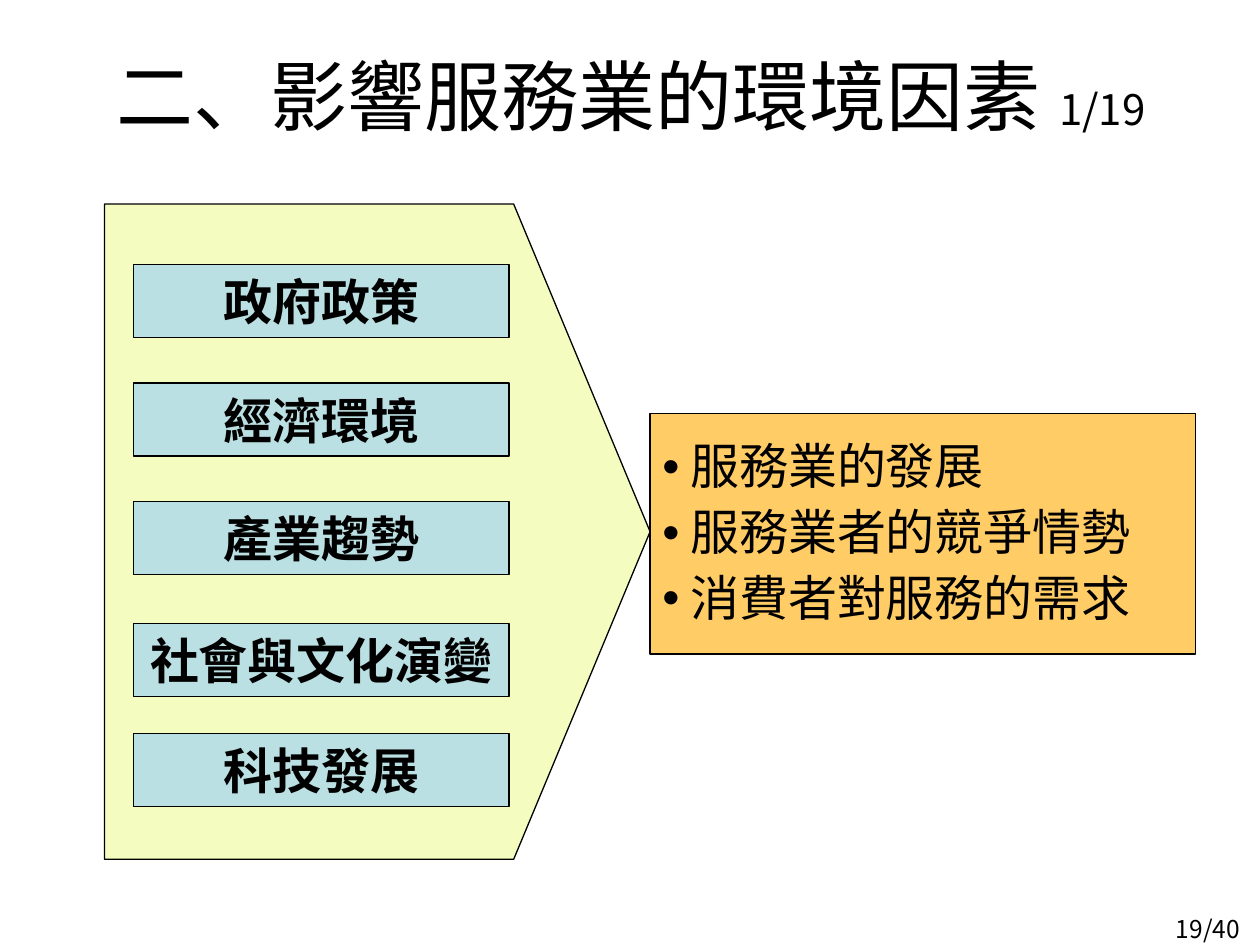
from lxml.etree import SubElement
from pptx import Presentation
from pptx.dml.color import RGBColor
from pptx.enum.shapes import MSO_SHAPE
from pptx.enum.text import MSO_ANCHOR, PP_ALIGN
from pptx.oxml.ns import qn
from pptx.util import Inches, Pt

deck = Presentation()
deck.slide_width, deck.slide_height = Inches(10), Inches(7.5)
page = deck.slides.add_slide(deck.slide_layouts[6])
column = deck.slide_width / 100
row = deck.slide_height / 75


def color(hex_value):
    return RGBColor.from_string(hex_value)


def write(text, *, place, sizes, font="Noto Sans CJK TC", bold=False,
          align=PP_ALIGN.LEFT, fill=None, shape=MSO_SHAPE.RECTANGLE,
          bullet=None, spacing=None):
    left, top, width, height = place
    area = [round(size) for size in
            (left * column, top * row, width * column, height * row)]
    if fill:
        box = page.shapes.add_shape(shape, *area)
        box.shadow.inherit = False
        box.fill.solid()
        box.fill.fore_color.rgb = color(fill)
        box.line.color.rgb = color("000000")
        box.line.width = Pt(0.75)
    else:
        box = page.shapes.add_textbox(*area)
    frame = box.text_frame
    frame.word_wrap = True
    frame.vertical_anchor = MSO_ANCHOR.MIDDLE
    frame.margin_top = frame.margin_bottom = 0
    for number, line in enumerate(text):
        para = frame.add_paragraph() if number else frame.paragraphs[0]
        if bullet:
            properties = para._p.get_or_add_pPr()
            properties.set("marL", str(Inches(0.22)))
            properties.set("indent", str(-Inches(0.22)))
            SubElement(properties, qn("a:buFont"), typeface="Arial")
            SubElement(properties, qn("a:buChar"), char=bullet)
        para.alignment = align
        if spacing:
            para.line_spacing = spacing
        if number:
            para.space_before = Pt(sizes[0] * 0.2)
        for words, size in zip(line, sizes):
            span = para.add_run()
            span.text = words
            span.font.size = Pt(size)
            span.font.name = font
            span.font.bold = bold
            span.font.color.rgb = color("000000")
            SubElement(span._r.get_or_add_rPr(), qn("a:ea"), typeface=font)
    return box


write([["19/40"]], place=(91, 72.1, 8.4, 3.2), sizes=[14], align=PP_ALIGN.RIGHT)
arrow = write([], place=(8.3, 16.2, 43.3, 52), sizes=[], fill="F4FDBF",
              shape=MSO_SHAPE.PENTAGON)
arrow.adjustments[0] = 0.25
write([["二、影響服務業的環境因素 ", "1/19"]], place=(5.1, 1.3, 90, 12.5),
      sizes=[44, 24], align=PP_ALIGN.CENTER)

effects = ["服務業的發展", "服務業者的競爭情勢", "消費者對服務的需求"]
write([[effect] for effect in effects], place=(51.6, 32.8, 43.3, 19.1),
      sizes=[28], font="Noto Sans CJK SC", fill="FFCC66", bullet="•",
      spacing=0.95)

factors = {"政府政策": 21, "經濟環境": 30.4, "產業趨勢": 39.8,
           "社會與文化演變": 49.5, "科技發展": 58.2}
for factor, top in factors.items():
    write([[factor]], place=(10.6, top, 29.8, 5.8), sizes=[28], font="Arial",
          bold=True, align=PP_ALIGN.CENTER, fill="BBE0E3")

deck.save("out.pptx")
